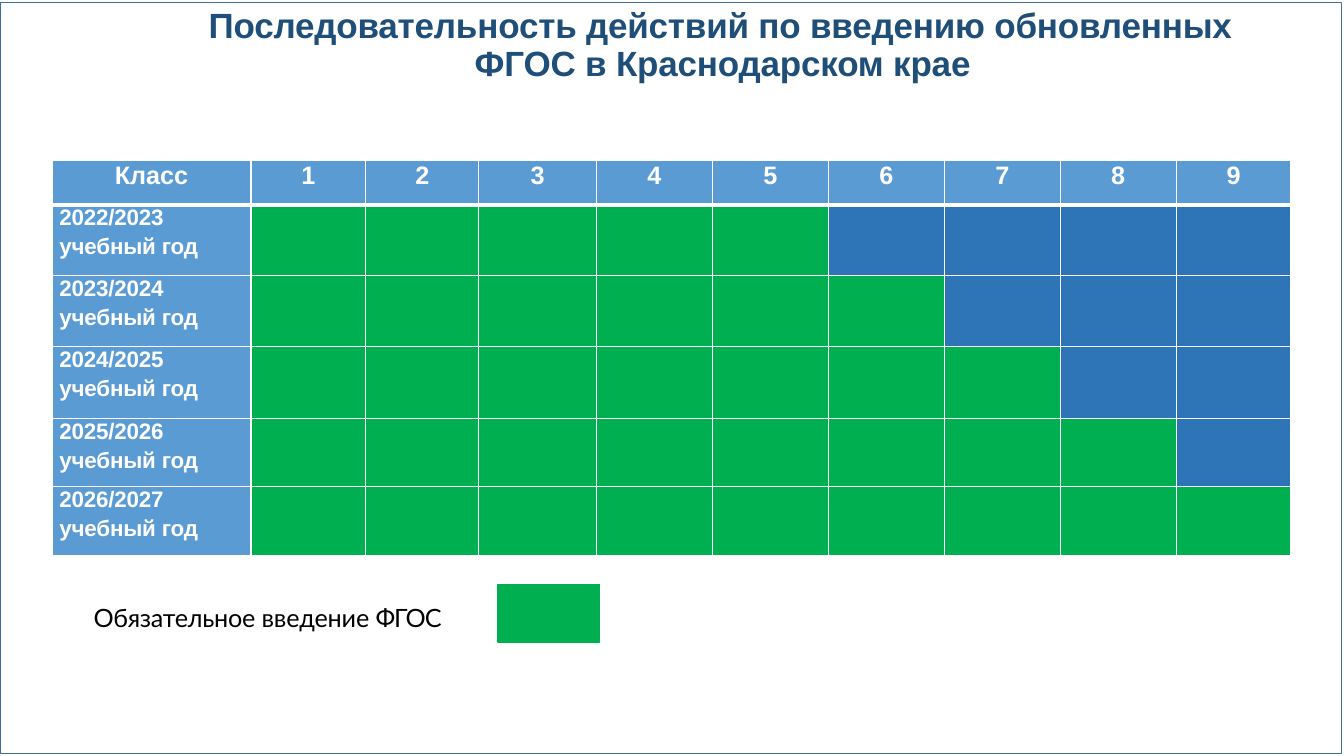
from dataclasses import dataclass

from lxml.etree import SubElement
from pptx import Presentation
from pptx.dml.color import RGBColor as Color
from pptx.enum.shapes import MSO_SHAPE as Shape
from pptx.enum.text import MSO_ANCHOR as Anchor, MSO_AUTO_SIZE as AutoSize, PP_ALIGN as Align
from pptx.oxml.ns import qn
from pptx.util import Pt

TITLE = "Последовательность действий по введению обновленных ФГОС в Краснодарском крае"
CLASS_LABEL = "Класс"
CLASSES = range(1, 10)
YEAR_LABEL = "учебный год"
# School year and the last class for which the standard is mandatory
YEARS = [
    ("2022/2023", 5),
    ("2023/2024", 6),
    ("2024/2025", 7),
    ("2025/2026", 8),
    ("2026/2027", 9),
]
LEGEND_RUNS = [("Обязательное ", -0.2), ("введение ", -0.1), ("ФГОС", -0.8)]

SLIDE_SIZE = (960, 540)
FRAME_BOX = (0, 1.44, 958.3, 536.4)
TITLE_BOX = (72, 1.44, 815.8, 59)
TABLE_BOX = (37.44, 114.5, 885, 281.5)
LEGEND_BOX = (66.24, 429.8, 259.2, 23.8)
SWATCH_BOX = (355.7, 417.6, 72.7, 41)
COLUMN_WIDTHS = [141.8, 82.1, 80.6, 84.2] + [82.8] * 5 + [82.1]
ROW_HEIGHTS = [31.7, 50.4, 51.1, 51.1, 49, 49]


@dataclass(frozen=True)
class Theme:
    heading_font: str = "Arial"
    legend_font: str = "Lato"
    title_color: str = "1F4E79"
    frame: str = "41709C"
    header: str = "5B9BD4"
    mandatory: str = "00AF50"
    later: str = "2D75B6"
    white: str = "FFFFFF"
    black: str = "000000"
    title_size: float = 25
    label_size: float = 18
    year_size: float = 16
    grid: float = 1
    header_rule: float = 3


THEME = Theme()


def points(values):
    return [Pt(value) for value in values]


def rgb(value):
    return Color.from_string(value)


def format_para(para, font, size, color, bold=False, before=0, left=0, first=0):
    para.font.name = font
    para.font.size = Pt(size)
    para.font.bold = bold
    para.font.color.rgb = rgb(color)
    para.space_before = Pt(before)
    properties = para._p.get_or_add_pPr()
    properties.set("marL", str(Pt(left)))
    properties.set("indent", str(Pt(first)))


def add_spaced_run(para, text, spacing):
    """Add a run whose letter spacing is given in points."""
    span = para.add_run()
    span.text = text
    span._r.get_or_add_rPr().set("spc", str(round(spacing * 100)))


def prepare_frame(frame, top):
    frame.word_wrap = True
    frame.auto_size = AutoSize.NONE
    frame.vertical_anchor = Anchor.TOP
    frame.margin_left = frame.margin_right = frame.margin_bottom = 0
    frame.margin_top = Pt(top)


def add_rectangle(slide, box, line, width, fill=None):
    shape = slide.shapes.add_shape(Shape.RECTANGLE, *points(box))
    shape.shadow.inherit = False
    shape.line.color.rgb = rgb(line)
    shape.line.width = Pt(width)
    if fill:
        shape.fill.solid()
        shape.fill.fore_color.rgb = rgb(fill)
    else:
        shape.fill.background()


def style_cell(cell, fill, top, bottom):
    cell.margin_left = cell.margin_right = cell.margin_bottom = 0
    cell.margin_top = Pt(0.72)
    properties = cell._tc.get_or_add_tcPr()
    borders = {"a:lnL": THEME.grid, "a:lnR": THEME.grid, "a:lnT": top, "a:lnB": bottom}
    for tag, width in borders.items():
        line = SubElement(properties, qn(tag), w=str(Pt(width)))
        SubElement(SubElement(line, qn("a:solidFill")), qn("a:srgbClr"), val=THEME.white)
    cell.fill.solid()
    cell.fill.fore_color.rgb = rgb(fill)


def format_label(para, size, **layout):
    format_para(para, THEME.heading_font, size, THEME.white, bold=True, **layout)


def add_title(slide):
    title = slide.shapes.title
    title.left, title.top, title.width, title.height = points(TITLE_BOX)
    prepare_frame(title.text_frame, 4.32)
    para = title.text_frame.paragraphs[0]
    add_spaced_run(para, TITLE, -0.1)
    para.alignment = Align.LEFT
    para.line_spacing = Pt(26.9)
    format_para(para, THEME.heading_font, THEME.title_size, THEME.title_color,
                bold=True, before=4.5, left=267.1, first=-190.1)


def add_schedule(slide):
    table = slide.shapes.add_table(len(ROW_HEIGHTS), len(COLUMN_WIDTHS), *points(TABLE_BOX)).table
    table.first_row = table.horz_banding = False
    for column, width in zip(table.columns, COLUMN_WIDTHS):
        column.width = Pt(width)
    for row, height in zip(table.rows, ROW_HEIGHTS):
        row.height = Pt(height)

    for index, text in enumerate([CLASS_LABEL, *CLASSES]):
        cell = table.cell(0, index)
        style_cell(cell, THEME.header, THEME.grid, THEME.header_rule)
        cell.text = str(text)
        para = cell.text_frame.paragraphs[0]
        para.alignment = Align.CENTER if index else Align.LEFT
        format_label(para, THEME.label_size, before=0.8, left=0 if index else 44.6)

    for row, (year, last_class) in enumerate(YEARS, start=1):
        top = THEME.header_rule if row == 1 else THEME.grid
        year_cell = table.cell(row, 0)
        style_cell(year_cell, THEME.header, top, THEME.grid)
        frame = year_cell.text_frame
        for para, text, before in ((frame.paragraphs[0], year, 0.7),
                                   (frame.add_paragraph(), YEAR_LABEL, 2.9)):
            add_spaced_run(para, text, -0.1)
            format_label(para, THEME.year_size, before=before, left=5)
        for number in CLASSES:
            fill = THEME.mandatory if number <= last_class else THEME.later
            style_cell(table.cell(row, number), fill, top, THEME.grid)


def add_legend(slide):
    box = slide.shapes.add_textbox(*points(LEGEND_BOX))
    prepare_frame(box.text_frame, 0.72)
    para = box.text_frame.paragraphs[0]
    for text, spacing in LEGEND_RUNS:
        add_spaced_run(para, text, spacing)
    format_para(para, THEME.legend_font, THEME.label_size, THEME.black, before=1, left=0.72)
    add_rectangle(slide, SWATCH_BOX, THEME.mandatory, 0.96, THEME.mandatory)


def main():
    deck = Presentation()
    deck.slide_width, deck.slide_height = points(SLIDE_SIZE)
    slide = deck.slides.add_slide(deck.slide_layouts[5])
    add_rectangle(slide, FRAME_BOX, THEME.frame, 0.25)
    add_title(slide)
    add_schedule(slide)
    add_legend(slide)
    deck.save("out.pptx")


if __name__ == "__main__":
    main()
